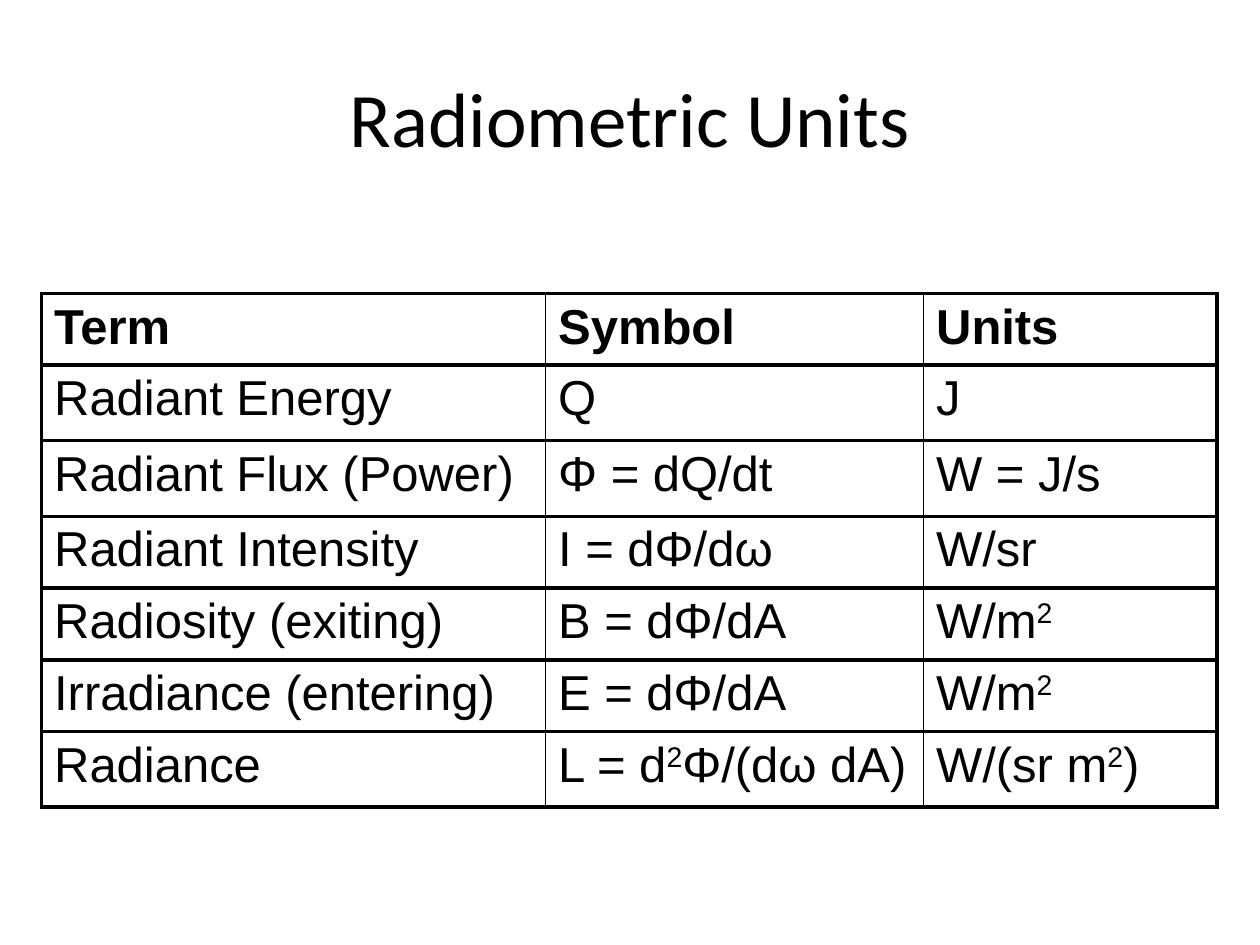
from lxml.etree import SubElement
from pptx import Presentation
from pptx.dml.color import RGBColor
from pptx.enum.text import MSO_ANCHOR, PP_ALIGN
from pptx.oxml.ns import qn
from pptx.util import Inches, Pt

# Content: text between carets is superscript
TITLE = "Radiometric Units"
ROWS = [
    ("Term", "Symbol", "Units"),
    ("Radiant Energy", "Q", "J"),
    ("Radiant Flux (Power)", "Φ = dQ/dt", "W = J/s"),
    ("Radiant Intensity", "I = dΦ/dω", "W/sr"),
    ("Radiosity (exiting)", "B = dΦ/dA", "W/m^2^"),
    ("Irradiance (entering)", "E = dΦ/dA", "W/m^2^"),
    ("Radiance", "L = d^2^Φ/(dω dA)", "W/(sr m^2^)"),
]
COL_WIDTHS = (4, 3, 2.33)
ROW_HEIGHTS = (0.5, 0.6, 0.6, 0.57, 0.57, 0.57, 0.6)

THEME = {
    "ink": "000000",
    "title_font": "Calibri", "title_size": 44,
    "table_font": "Arial", "table_size": 28,
    "thick": 2.25, "thin": 1,
}


def add_run(p, text, kind, bold=False):
    r = p.add_run()
    r.text = text
    r.font.name = THEME[f"{kind}_font"]
    r.font.size = Pt(THEME[f"{kind}_size"])
    r.font.bold = bold
    r.font.color.rgb = RGBColor.from_string(THEME["ink"])
    return r


def set_borders(cell, widths):
    """Draw the cell's borders; widths are left, right, top, bottom in points."""
    tc_pr = cell._tc.get_or_add_tcPr()
    for i, (side, width) in enumerate(zip("LRTB", widths)):
        ln = SubElement(tc_pr, qn(f"a:ln{side}"), w=str(Pt(width)))
        fill = SubElement(ln, qn("a:solidFill"))
        SubElement(fill, qn("a:srgbClr"), val=THEME["ink"])
        tc_pr.insert(i, ln)


prs = Presentation()
prs.slide_width, prs.slide_height = Inches(10), Inches(7.5)
s = prs.slides.add_slide(prs.slide_layouts[6])

# Title
tf = s.shapes.add_textbox(Inches(0.5), Inches(0.3), Inches(9), Inches(1.25)).text_frame
tf.word_wrap = True
tf.vertical_anchor = MSO_ANCHOR.MIDDLE
tf.paragraphs[0].alignment = PP_ALIGN.CENTER
add_run(tf.paragraphs[0], TITLE, "title")

# Table frame
table = s.shapes.add_table(
    len(ROWS), len(COL_WIDTHS), Inches(0.33), Inches(2.33),
    Inches(sum(COL_WIDTHS)), Inches(sum(ROW_HEIGHTS))).table
table.first_row = table.horz_banding = False
for column, width in zip(table.columns, COL_WIDTHS):
    column.width = Inches(width)
for row, height in zip(table.rows, ROW_HEIGHTS):
    row.height = Inches(height)

# Cells: thick rules all round and between rows, thin ones between columns
thick, thin = THEME["thick"], THEME["thin"]
last = len(COL_WIDTHS) - 1
for i, texts in enumerate(ROWS):
    for j, text in enumerate(texts):
        cell = table.cell(i, j)
        cell.fill.background()
        set_borders(cell, (thin if j > 0 else thick,
                           thin if j < last else thick, thick, thick))
        p = cell.text_frame.paragraphs[0]
        for k, part in enumerate(text.split("^")):
            r = add_run(p, part, "table", bold=i == 0)
            if k % 2:
                r.font._element.set("baseline", "30000")

prs.save("out.pptx")
